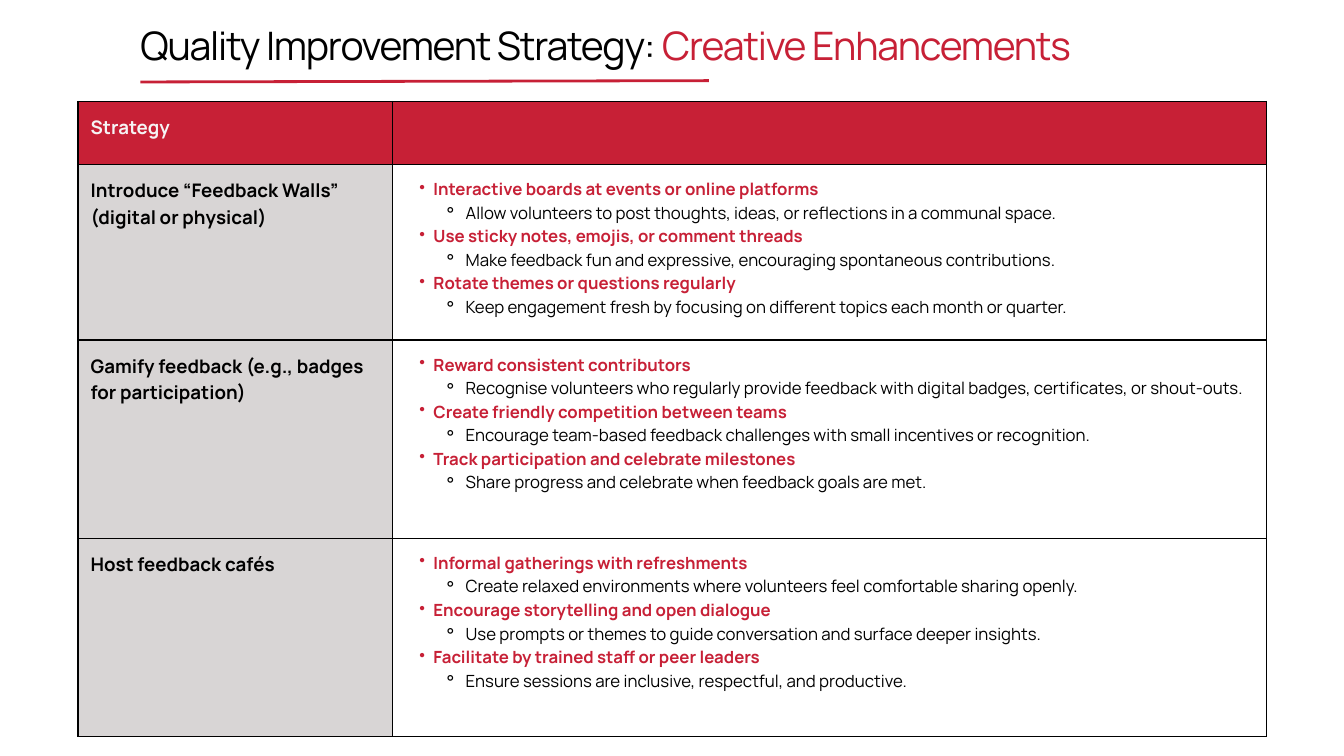
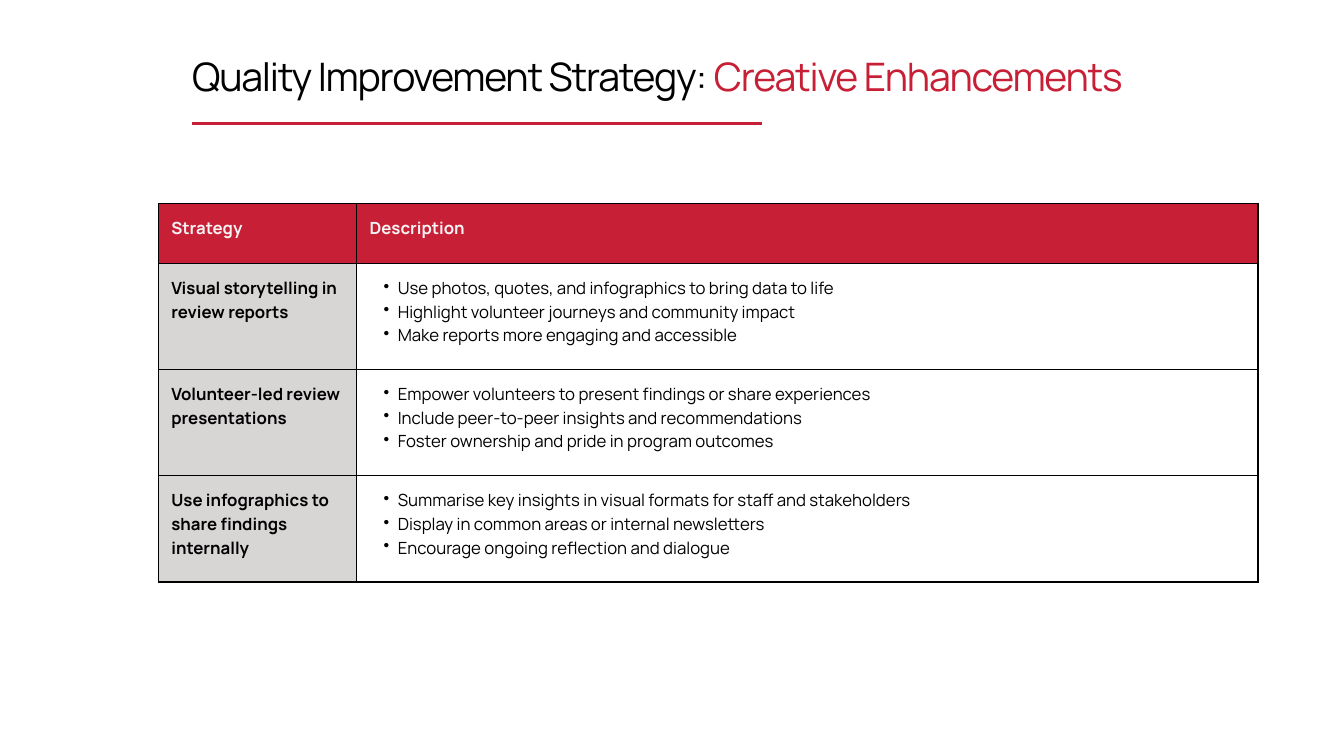
import pptx
import pptx.dml.color
import pptx.enum.shapes
import pptx.enum.text
import pptx.oxml
import pptx.oxml.ns
import pptx.util
from lxml import etree

Inches = pptx.util.Inches
Pt = pptx.util.Pt
qn = pptx.oxml.ns.qn

FONT = "Manrope"
RED, GREY, BLACK, OFF_WHITE, WHITE = "C72036", "D8D5D5", "000000", "F6F4F5", "FFFFFF"
TITLE = [("Quality Improvement Strategy: ", BLACK), ("Creative Enhancements", RED)]
INSET = 0.19
BULLETS = {1: ("•", 0.42, -0.21), 2: ("⚬", 0.9, -0.33)}

FEEDBACK_ROWS = [
    ("Introduce “Feedback Walls” (digital or physical)", [
        ("Interactive boards at events or online platforms",
         "Allow volunteers to post thoughts, ideas, or reflections in a communal space."),
        ("Use sticky notes, emojis, or comment threads",
         "Make feedback fun and expressive, encouraging spontaneous contributions."),
        ("Rotate themes or questions regularly",
         "Keep engagement fresh by focusing on different topics each month or quarter."),
    ]),
    ("Gamify feedback (e.g., badges for participation)", [
        ("Reward consistent contributors",
         "Recognise volunteers who regularly provide feedback with digital badges, "
         "certificates, or shout-outs."),
        ("Create friendly competition between teams",
         "Encourage team-based feedback challenges with small incentives or recognition."),
        ("Track participation and celebrate milestones",
         "Share progress and celebrate when feedback goals are met."),
    ]),
    ("Host feedback cafés", [
        ("Informal gatherings with refreshments",
         "Create relaxed environments where volunteers feel comfortable sharing openly."),
        ("Encourage storytelling and open dialogue",
         "Use prompts or themes to guide conversation and surface deeper insights."),
        ("Facilitate by trained staff or peer leaders",
         "Ensure sessions are inclusive, respectful, and productive."),
    ]),
]
REVIEW_ROWS = [
    ("Visual storytelling in review reports", [
        "Use photos, quotes, and infographics to bring data to life",
        "Highlight volunteer journeys and community impact",
        "Make reports more engaging and accessible",
    ]),
    ("Volunteer-led review presentations", [
        "Empower volunteers to present findings or share experiences",
        "Include peer-to-peer insights and recommendations",
        "Foster ownership and pride in program outcomes",
    ]),
    ("Use infographics to share findings internally", [
        "Summarise key insights in visual formats for staff and stakeholders",
        "Display in common areas or internal newsletters",
        "Encourage ongoing reflection and dialogue",
    ]),
]


def rgb(color):
    return pptx.dml.color.RGBColor.from_string(color)


def format_run(r, size, color, bold=False):
    r.font.name = FONT
    r.font.size = Pt(size)
    r.font.bold = bold
    r.font.color.rgb = rgb(color)


def add_bullet(p, level):
    char, left, indent = BULLETS[level]
    p.level = level
    pPr = p._p.get_or_add_pPr()
    pPr.set("marL", str(Inches(left)))
    pPr.set("indent", str(Inches(indent)))
    etree.SubElement(pPr, qn("a:buChar")).set("char", char)


def add_borders(cell):
    tcPr = cell._tc.get_or_add_tcPr()
    for side in "LRTB":
        ln = etree.SubElement(tcPr, qn(f"a:ln{side}"), w=str(Pt(1.5)))
        fill = etree.SubElement(ln, qn("a:solidFill"))
        etree.SubElement(fill, qn("a:srgbClr"), val=BLACK)


def fill_cell(cell, items, fill=None):
    add_borders(cell)
    if fill:
        cell.fill.solid()
        cell.fill.fore_color.rgb = rgb(fill)
    else:
        cell.fill.background()
    cell.margin_left = cell.margin_right = Inches(INSET)
    cell.margin_top = cell.margin_bottom = Inches(INSET)
    tf = cell.text_frame
    for i, (text, level, size, color, bold) in enumerate(items):
        p = tf.add_paragraph() if i else tf.paragraphs[0]
        p.text = text
        p.line_spacing = Pt(size * 1.4)
        if level:
            add_bullet(p, level)
        format_run(p.runs[0], size, color, bold)


def description_items(points):
    items = []
    for point in points:
        if isinstance(point, str):
            items.append((point, 1, 18, BLACK, False))
        else:
            heading, detail = point
            items += [(heading, 1, 18, RED, True), (detail, 2, 18, BLACK, False)]
    return items


def add_heading(slide, left, top, width, rule_width, rule_start, rule_end):
    sp = slide.shapes.title
    sp.left, sp.top, sp.width, sp.height = map(Inches, (left, top, width, 0.88))
    tf = sp.text_frame
    tf.word_wrap = True
    tf.auto_size = pptx.enum.text.MSO_AUTO_SIZE.NONE
    tf.vertical_anchor = pptx.enum.text.MSO_ANCHOR.TOP
    tf.margin_left = tf.margin_right = tf.margin_top = tf.margin_bottom = 0
    p = tf.paragraphs[0]
    p.alignment = pptx.enum.text.PP_ALIGN.LEFT
    p.line_spacing = Pt(63)
    for text, color in TITLE:
        r = p.add_run()
        r.text = text
        format_run(r, 42, color)
        r.font._element.set("spc", "-130")

    rule = slide.shapes.add_connector(
        pptx.enum.shapes.MSO_CONNECTOR.STRAIGHT, Inches(left), Inches(top + rule_start),
        Inches(left + rule_width), Inches(top + rule_end))
    rule.line.color.rgb = rgb(RED)
    rule.line.width = Pt(3)
    etree.SubElement(rule._element.spPr, qn("a:effectLst"))


def add_strategy_table(slide, left, top, col_widths, row_heights, headers, rows, label_size):
    frame = slide.shapes.add_table(
        len(row_heights), len(col_widths), Inches(left), Inches(top),
        Inches(sum(col_widths)), Inches(sum(row_heights)))
    table = frame.table
    table.first_row = table.horz_banding = False
    for col, width in zip(table.columns, col_widths):
        col.width = Inches(width)
    for row, height in zip(table.rows, row_heights):
        row.height = Inches(height)
    for c, header in enumerate(headers):
        items = [(header, 0, label_size, OFF_WHITE, True)] if header else []
        fill_cell(table.cell(0, c), items, RED)
    for i, (strategy, points) in enumerate(rows, 1):
        fill_cell(table.cell(i, 0), [(strategy, 0, label_size, BLACK, True)], GREY)
        fill_cell(table.cell(i, 1), description_items(points))


def add_slide(prs):
    slide = prs.slides.add_slide(prs.slide_layouts[5])
    slide.background.fill.solid()
    slide.background.fill.fore_color.rgb = rgb(WHITE)
    return slide


def add_feedback_slide(prs):
    slide = add_slide(prs)
    add_strategy_table(slide, 1.16, 1.51, [4.68, 13.01], [0.94, 2.61, 2.95, 2.95],
                       ["Strategy", ""], FEEDBACK_ROWS, 20)
    add_heading(slide, 2.09, 0.14, 16.47, 8.46, 1.08, 1.06)


def add_review_slide(prs):
    slide = add_slide(prs)
    add_strategy_table(slide, 2.36, 3.03, [2.95, 13.41], [0.89] + [1.58] * 3,
                       ["Strategy", "Description"], REVIEW_ROWS, 18)
    add_heading(slide, 2.86, 0.6, 15.36, 8.48, 1.24, 1.24)


def main():
    prs = pptx.Presentation()
    prs.slide_width, prs.slide_height = Inches(20), Inches(11.25)
    add_feedback_slide(prs)
    add_review_slide(prs)
    prs.save("out.pptx")


if __name__ == "__main__":
    main()
